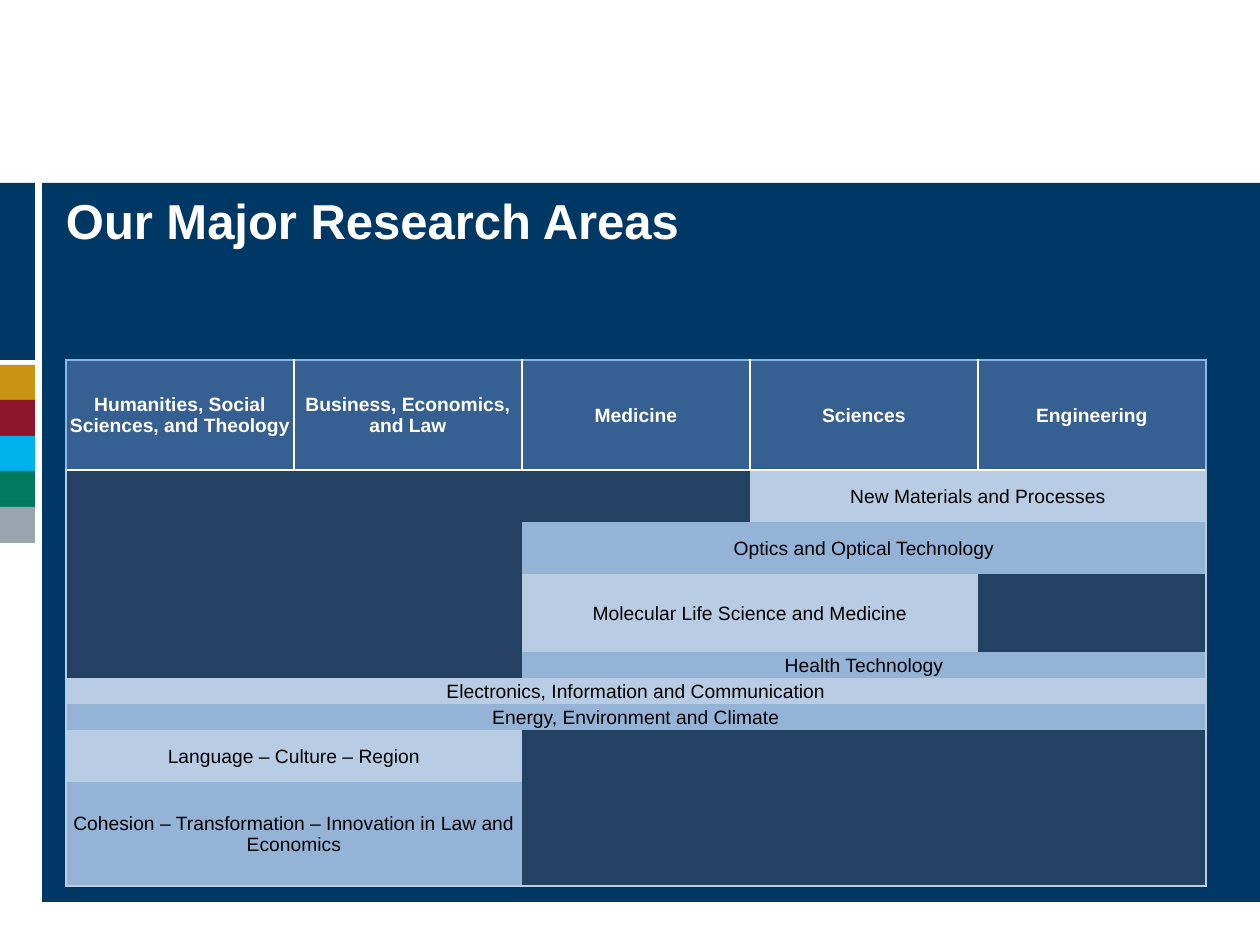
from lxml import etree
from pptx import Presentation
from pptx.dml.color import RGBColor
from pptx.enum.shapes import MSO_SHAPE
from pptx.enum.text import MSO_ANCHOR, MSO_AUTO_SIZE, PP_ALIGN
from pptx.oxml.ns import qn
from pptx.util import Emu, Pt

RECT = MSO_SHAPE.RECTANGLE
TOP, MIDDLE = MSO_ANCHOR.TOP, MSO_ANCHOR.MIDDLE
LEFT, CENTER = PP_ALIGN.LEFT, PP_ALIGN.CENTER
NO_AUTOFIT = MSO_AUTO_SIZE.NONE

NAVY, WHITE, BLACK = "003865", "FFFFFF", "000000"
HEADER, EMPTY = "366092", "244062"
PALE, MID, HEADER_EDGE = "B8CCE4", "95B3D7", "8DB4E2"
STRIPES = ["C99313", "8D1429", "00B1EB", "007A5D", "98A4AE"]

FACULTIES = [
    "Humanities, Social Sciences, and Theology",
    "Business, Economics, and Law",
    "Medicine",
    "Sciences",
    "Engineering",
]
AREAS = [
    ("New Materials and Processes", 3, 4, 52),
    ("Optics and Optical Technology", 2, 4, 52),
    ("Molecular Life Science and Medicine", 2, 3, 78),
    ("Health Technology", 2, 4, 26),
    ("Electronics, Information and Communication", 0, 4, 26),
    ("Energy, Environment and Climate", 0, 4, 26),
    ("Language – Culture – Region", 0, 1, 52),
    ("Cohesion – Transformation – Innovation in Law and Economics", 0, 1, 104),
]


def px(n):
    return Emu(n * 914400 // 126)


def rgb(value):
    return RGBColor.from_string(value)


class SlideBuilder:
    font = "Arial"

    def __init__(self, slide):
        self.slide = slide

    def style(self, p, size, color, bold, align):
        p.alignment = align
        p.font.name = self.font
        p.font.size = Pt(size)
        p.font.bold = bold
        p.font.color.rgb = rgb(color)

    def bar(self, x, y, w, h, color):
        sp = self.slide.shapes.add_shape(RECT, px(x), px(y), px(w), px(h))
        sp.shadow.inherit = False
        sp.fill.solid()
        sp.fill.fore_color.rgb = rgb(color)
        sp.line.fill.background()

    def title(self, text, x, y, w, h):
        sp = self.slide.shapes.title
        sp.left, sp.top, sp.width, sp.height = px(x), px(y), px(w), px(h)
        tf = sp.text_frame
        tf.text = text
        tf.word_wrap = True
        tf.auto_size = NO_AUTOFIT
        tf.vertical_anchor = TOP
        tf.margin_left = tf.margin_top = tf.margin_right = tf.margin_bottom = 0
        p = tf.paragraphs[0]
        p.line_spacing = Pt(32)
        self.style(p, 28, WHITE, True, LEFT)
        self.slide.shapes._spTree.append(sp._element)

    def table(self, x, y, col_width, row_heights):
        rows, cols = len(row_heights), len(FACULTIES)
        frame = self.slide.shapes.add_table(
            rows, cols, px(x), px(y), px(col_width * cols), px(sum(row_heights)))
        table = frame.table
        for col in table.columns:
            col.width = px(col_width)
        for row, height in zip(table.rows, row_heights):
            row.height = px(height)
        return table

    def cell(self, cell, text, fill, color, bold, edges):
        cell.text = text
        cell.vertical_anchor = MIDDLE
        cell.margin_left = cell.margin_top = cell.margin_right = px(1)
        cell.margin_bottom = 0
        self.style(cell.text_frame.paragraphs[0], 11, color, bold, CENTER)
        tc_pr = cell._tc.get_or_add_tcPr()
        for side, edge in zip("LRTB", edges):
            ln = etree.SubElement(tc_pr, qn(f"a:ln{side}"), w=str(Pt(1)))
            if edge:
                solid = etree.SubElement(ln, qn("a:solidFill"))
                etree.SubElement(solid, qn("a:srgbClr"), val=edge)
            else:
                etree.SubElement(ln, qn("a:noFill"))
        cell.fill.solid()
        cell.fill.fore_color.rgb = rgb(fill)


def research_table(builder):
    table = builder.table(66, 360, 228, [110] + [area[3] for area in AREAS])
    last_col, last_row = len(FACULTIES) - 1, len(AREAS)
    for c, faculty in enumerate(FACULTIES):
        edges = (WHITE if c else HEADER_EDGE,
                 WHITE if c < last_col else HEADER_EDGE, HEADER_EDGE, WHITE)
        builder.cell(table.cell(0, c), faculty, HEADER, WHITE, True, edges)
    for r, (area, first, last, _) in enumerate(AREAS, 1):
        for c in range(last_col + 1):
            covered = first <= c <= last
            right = last if covered else c
            edges = (None if c else PALE,
                     PALE if right == last_col else None,
                     WHITE if r == 1 else None,
                     PALE if r == last_row else None)
            fill = (PALE if r % 2 else MID) if covered else EMPTY
            text = area if c == first else ""
            builder.cell(table.cell(r, c), text, fill, BLACK, False, edges)
        table.cell(r, first).merge(table.cell(r, last))


def main():
    prs = Presentation()
    prs.slide_width, prs.slide_height = px(1260), px(945)
    s = prs.slides.add_slide(prs.slide_layouts[0])
    subtitle = s.placeholders[1]._element
    subtitle.getparent().remove(subtitle)

    builder = SlideBuilder(s)
    for i, color in enumerate(STRIPES):
        builder.bar(0, 365 + i * 71 // 2, 35, 36, color)
    builder.bar(0, 183, 35, 177, NAVY)
    builder.bar(42, 183, 1218, 719, NAVY)
    builder.title("Our Major Research Areas", 66, 193, 1181, 321)
    research_table(builder)
    prs.save("out.pptx")


if __name__ == "__main__":
    main()
